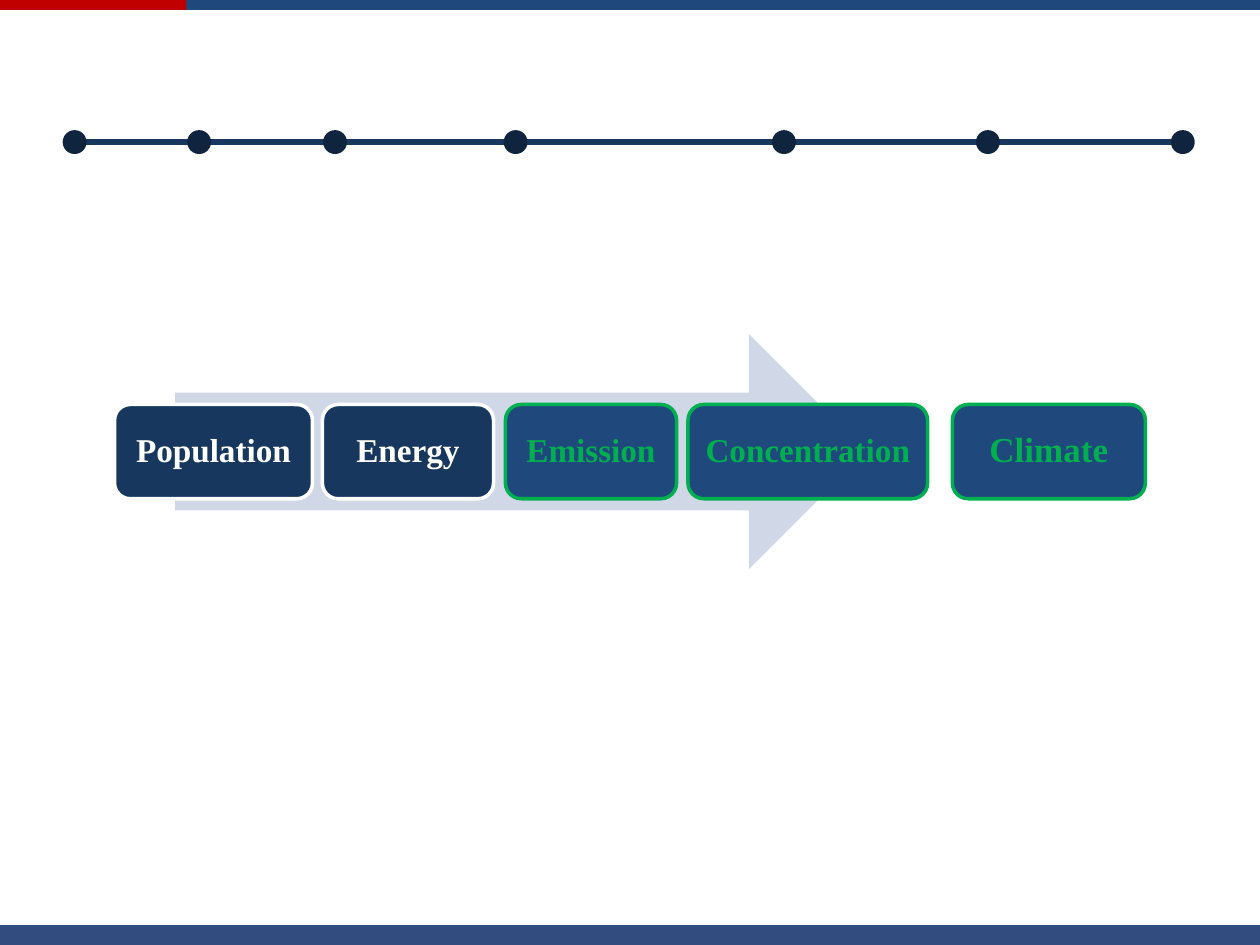
from lxml.etree import SubElement
from pptx import Presentation
from pptx.dml.color import RGBColor
from pptx.enum.shapes import MSO_CONNECTOR, MSO_SHAPE
from pptx.enum.text import MSO_ANCHOR, PP_ALIGN
from pptx.oxml.ns import qn
from pptx.util import Cm, Pt

WIDE, HIGH = 25.4, 19.05
NAVY, BLUE, GREEN, WHITE = "17375E", "1F497D", "00B050", "FFFFFF"


def paint(target, color):
    """Give a fill a solid colour."""
    target.solid()
    target.fore_color.rgb = RGBColor.from_string(color)


def draw(slide, kind, box, fill, line=None, width=2):
    shape = slide.shapes.add_shape(kind, *map(Cm, box))
    shape.shadow.inherit = False
    paint(shape.fill, fill)
    if line:
        paint(shape.line.fill, line)
        shape.line.width = Pt(width)
    else:
        shape.line.fill.background()
    return shape


def write(shape, text, size=19, color=WHITE, bold=True, font="Times New Roman"):
    frame = shape.text_frame
    frame.word_wrap = True
    frame.vertical_anchor = MSO_ANCHOR.MIDDLE
    frame.margin_left = frame.margin_right = Cm(0.2)
    frame.margin_top = frame.margin_bottom = Cm(0.2)
    para = frame.paragraphs[0]
    para.alignment = PP_ALIGN.CENTER
    para.line_spacing = 0.9
    run = para.add_run()
    run.text = text
    run.font.name, run.font.size, run.font.bold = font, Pt(size), bold
    run.font.color.rgb = RGBColor.from_string(color)


def add_bars(slide, wide, high):
    # Top stripe: red start, blue rest
    red, thick, foot = 3.76, 0.2, 0.4
    draw(slide, MSO_SHAPE.RECTANGLE, (0, 0, wide, thick), "C00000")
    draw(slide, MSO_SHAPE.RECTANGLE, (red, 0, wide - red, thick), BLUE)

    # Translucent footer
    bar = draw(slide, MSO_SHAPE.RECTANGLE, (0, high - foot, wide, foot), "002060")
    tint = bar.fill._xPr.find(qn("a:solidFill"))[0]
    SubElement(tint, qn("a:alpha"), val="80000")


def add_track(slide, left, top, wide, size):
    # Line behind the dots
    mid = top + size / 2
    line = slide.shapes.add_connector(
        MSO_CONNECTOR.STRAIGHT, Cm(left + size), Cm(mid), Cm(left + wide - size), Cm(mid))
    paint(line.line.fill, NAVY)
    line.line.width = Pt(3)
    SubElement(line._element.spPr, qn("a:effectLst"))

    # Dots
    for step in (0, 2.51, 5.25, 8.89, 14.3, 18.41, wide - size):
        draw(slide, MSO_SHAPE.FLOWCHART_CONNECTOR,
             (left + step, top, size, size), "0F243E", "0F243E")


def add_flow(slide, left, top, high):
    # Arrow behind the steps
    draw(slide, MSO_SHAPE.RIGHT_ARROW, (left + 1.22, top, 13.94, high), "D0D8E8")

    # Steps: name, offset, width, fill, accent, text size
    steps = (
        ("Population", 0, 3.99, NAVY, WHITE, 19),
        ("Energy", 4.19, 3.45, NAVY, WHITE, 19),
        ("Emission", 7.88, 3.45, BLUE, GREEN, 19),
        ("Concentration", 11.56, 4.83, BLUE, GREEN, 19),
        ("Climate", 16.89, 3.89, BLUE, GREEN, 20),
    )
    tall = high * 0.4
    y = top + (high - tall) / 2
    for name, x, wide, fill, accent, size in steps:
        card = draw(slide, MSO_SHAPE.ROUNDED_RECTANGLE,
                    (left + x, y, wide, tall), fill, accent)
        write(card, name, size=size, color=accent)


def main():
    deck = Presentation()
    deck.slide_width, deck.slide_height = Cm(WIDE), Cm(HIGH)
    slide = deck.slides.add_slide(deck.slide_layouts[6])
    add_bars(slide, WIDE, HIGH)
    add_track(slide, 1.3, 2.66, 22.75, 0.41)
    add_flow(slide, 2.31, 6.73, 4.75)
    deck.save("out.pptx")


if __name__ == "__main__":
    main()
